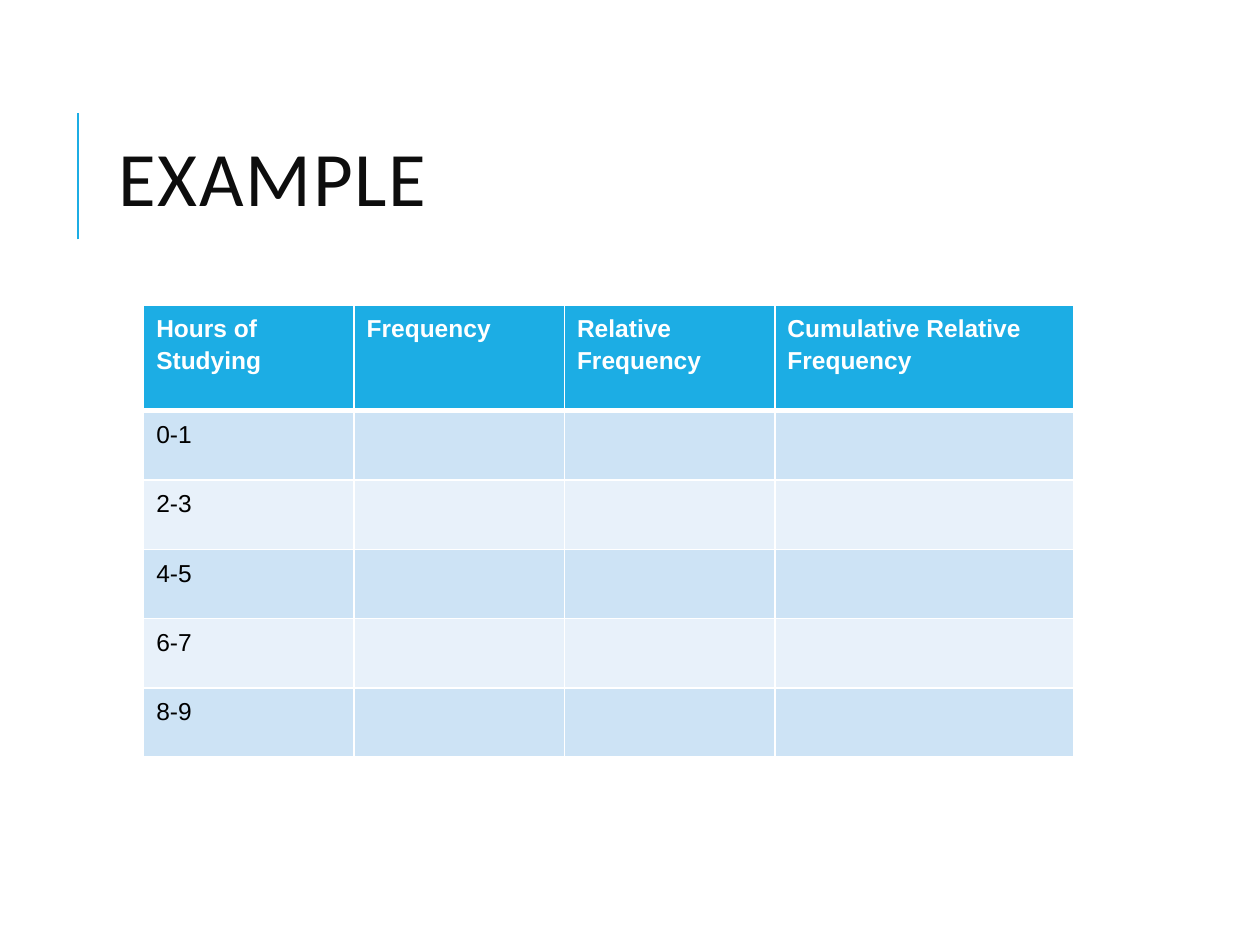
from lxml.etree import SubElement
from pptx import Presentation
from pptx.dml.color import RGBColor
from pptx.enum.shapes import MSO_CONNECTOR
from pptx.enum.text import MSO_ANCHOR, MSO_AUTO_SIZE, PP_ALIGN
from pptx.oxml.ns import qn
from pptx.util import Inches, Pt

TITLE = "EXAMPLE"
HEADERS = ["Hours of Studying", "Frequency", "Relative Frequency",
           "Cumulative Relative Frequency"]
HOURS = ["0-1", "2-3", "4-5", "6-7", "8-9"]
COLUMN_WIDTHS = [1.67, 1.67, 1.67, 2.37]
HEADER_HEIGHT, ROW_HEIGHT = 0.84, 0.55

ACCENT = RGBColor(0x1C, 0xAD, 0xE4)
INK = RGBColor(0x0D, 0x0D, 0x0D)
BLACK = RGBColor(0x00, 0x00, 0x00)
WHITE = RGBColor(0xFF, 0xFF, 0xFF)
BANDS = [RGBColor(0xCD, 0xE3, 0xF5), RGBColor(0xE8, 0xF1, 0xFA)]


def add_title(slide):
    title = slide.shapes.title
    title.left, title.top = Inches(0.84), Inches(0.64)
    title.width, title.height = Inches(7.97), Inches(1.64)
    frame = title.text_frame
    frame.text = TITLE
    frame.word_wrap = True
    frame.auto_size = MSO_AUTO_SIZE.NONE
    frame.vertical_anchor = MSO_ANCHOR.MIDDLE
    paragraph = frame.paragraphs[0]
    paragraph.alignment = PP_ALIGN.LEFT
    paragraph.line_spacing = 0.8
    font = paragraph.runs[0].font
    font.name, font.size = "Calibri", Pt(44)
    font.color.rgb = INK
    paragraph.runs[0]._r.get_or_add_rPr().set("spc", "100")


def add_accent_line(slide):
    line = slide.shapes.add_connector(
        MSO_CONNECTOR.STRAIGHT, Inches(0.62), Inches(1.9), Inches(0.62), Inches(0.9))
    line.line.color.rgb = ACCENT
    line.line.width = Pt(1.5)
    SubElement(line._element.spPr, qn("a:effectLst"))


def set_borders(cell, widths):
    properties = cell._tc.get_or_add_tcPr()
    for side, width in widths.items():
        border = SubElement(properties, qn(f"a:ln{side}"), w=str(Pt(width)))
        fill = SubElement(border, qn("a:solidFill"))
        SubElement(fill, qn("a:srgbClr"), val=str(WHITE))


def format_cell(cell, text, row):
    is_header = row == 0
    set_borders(cell, {"L": 1, "R": 1, "T": 3 if row == 1 else 1,
                       "B": 3 if is_header else 1})
    cell.fill.solid()
    cell.fill.fore_color.rgb = ACCENT if is_header else BANDS[(row - 1) % 2]
    cell.text = text
    paragraph = cell.text_frame.paragraphs[0]
    paragraph.line_spacing = 1.15
    paragraph.space_after = Pt(10)
    font = paragraph.font
    font.name, font.size, font.bold = "Arial", Pt(14), is_header
    font.color.rgb = WHITE if is_header else BLACK


def add_frequency_table(slide):
    rows = [HEADERS] + [[hours] + [""] * (len(HEADERS) - 1) for hours in HOURS]
    heights = [HEADER_HEIGHT] + [ROW_HEIGHT] * len(HOURS)
    table = slide.shapes.add_table(
        len(rows), len(HEADERS), Inches(1.14), Inches(2.42),
        Inches(sum(COLUMN_WIDTHS)), Inches(sum(heights))).table
    for column, width in zip(table.columns, COLUMN_WIDTHS):
        column.width = Inches(width)
    for row, (texts, height) in enumerate(zip(rows, heights)):
        table.rows[row].height = Inches(height)
        for column, text in enumerate(texts):
            format_cell(table.cell(row, column), text, row)


def main():
    presentation = Presentation()
    presentation.slide_width, presentation.slide_height = Inches(10), Inches(7.5)
    slide = presentation.slides.add_slide(presentation.slide_layouts[5])
    add_accent_line(slide)
    add_title(slide)
    add_frequency_table(slide)
    presentation.save("out.pptx")


if __name__ == "__main__":
    main()
